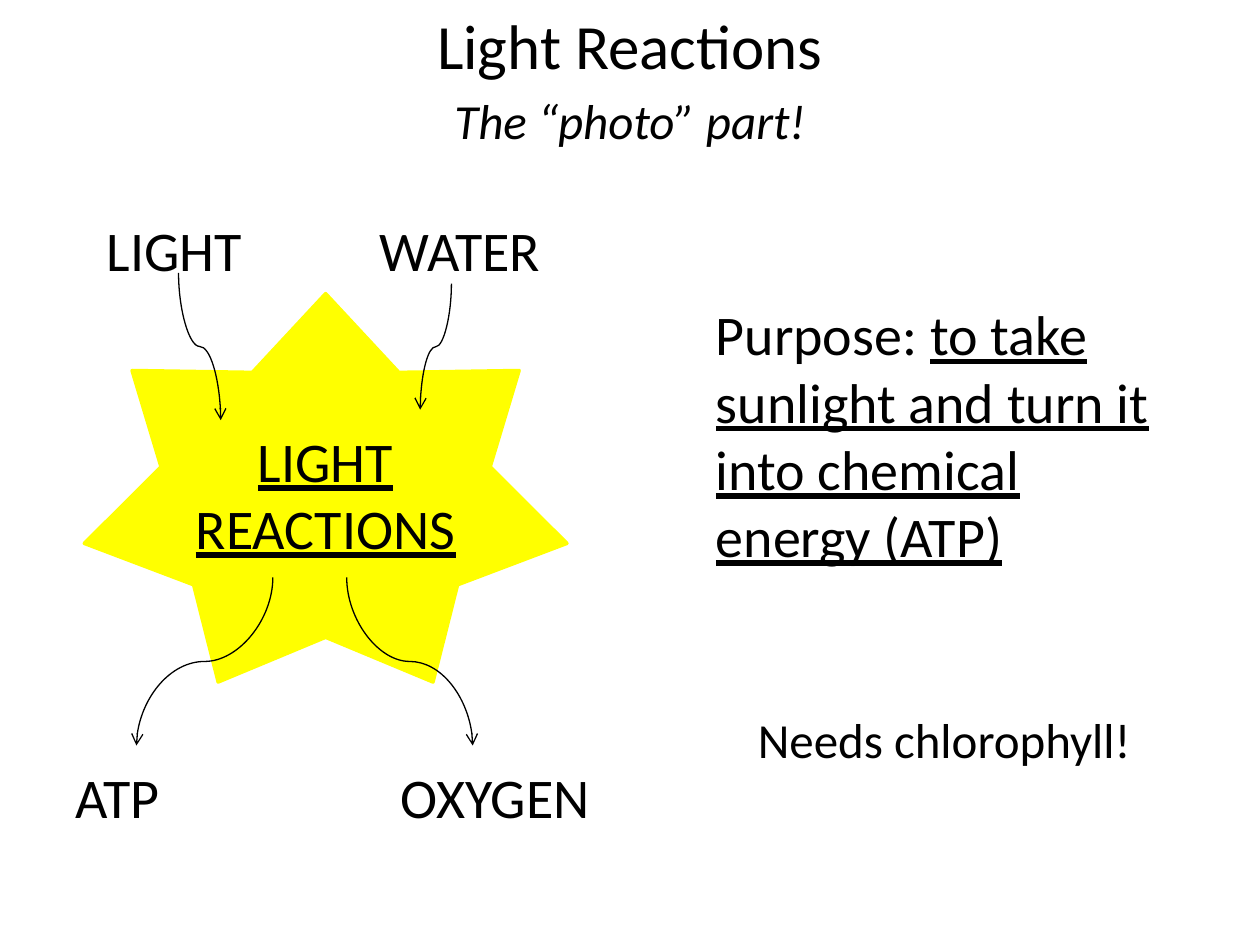
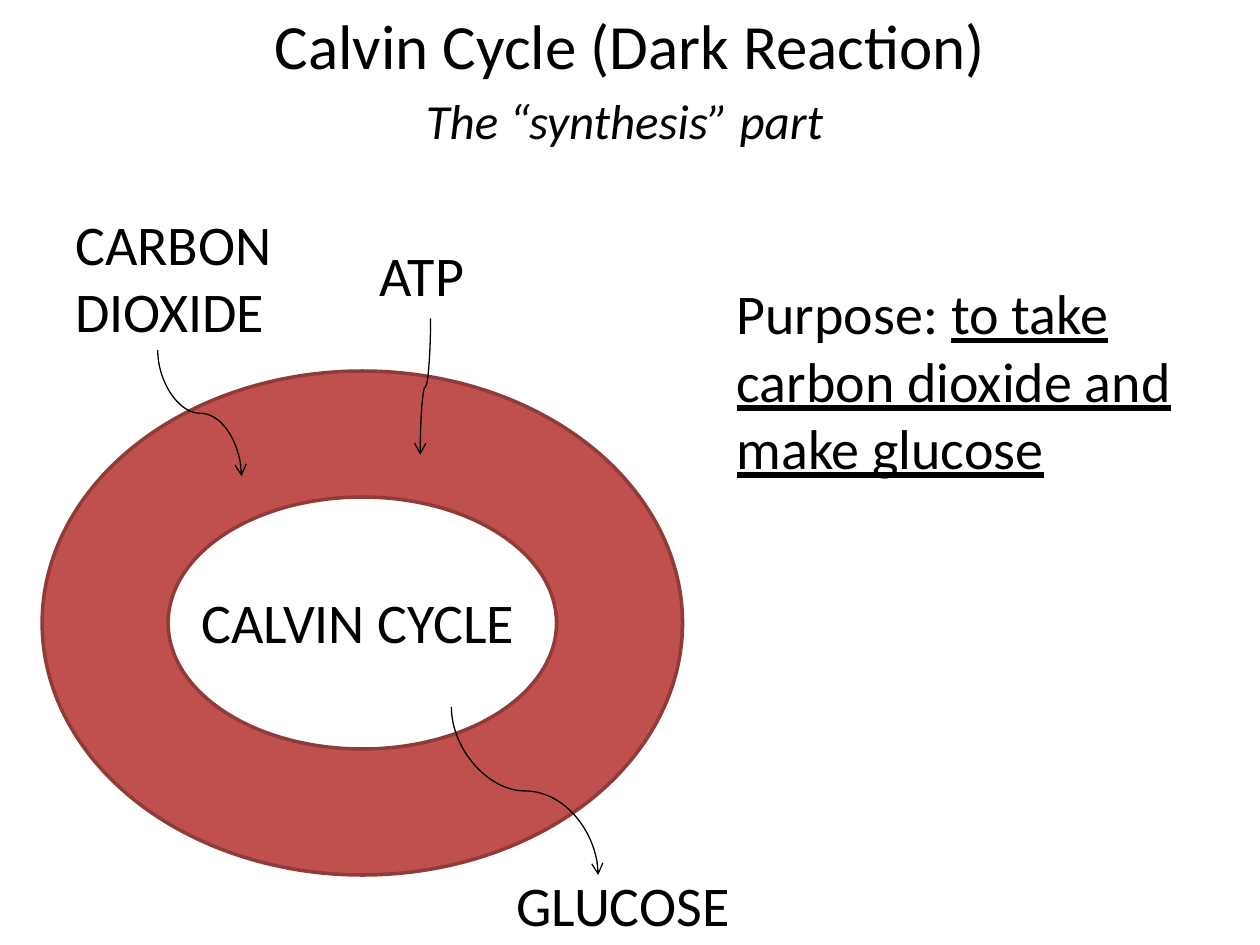
"""Build two slides on the light reactions and the Calvin cycle."""
from dataclasses import dataclass

from lxml import etree
from pptx import Presentation
from pptx.dml.color import RGBColor
from pptx.enum.shapes import MSO_CONNECTOR, MSO_SHAPE
from pptx.enum.text import MSO_ANCHOR, MSO_AUTO_SIZE, PP_ALIGN
from pptx.oxml.ns import qn
from pptx.util import Cm, Pt

LEFT, CENTER = PP_ALIGN.LEFT, PP_ALIGN.CENTER
TOP = MSO_ANCHOR.TOP
GROW = MSO_AUTO_SIZE.SHAPE_TO_FIT_TEXT
CURVE = MSO_CONNECTOR.CURVE
STAR, DONUT = MSO_SHAPE.STAR_7_POINT, MSO_SHAPE.DONUT


@dataclass(frozen=True)
class Theme:
    font: str = "Calibri"
    ink: RGBColor = RGBColor(0x00, 0x00, 0x00)
    sun: RGBColor = RGBColor(0xFF, 0xFF, 0x00)
    ring: RGBColor = RGBColor(0xC0, 0x50, 0x4D)
    ring_edge: RGBColor = RGBColor(0x8E, 0x3B, 0x39)
    title_size: int = 36
    note_size: int = 28
    body_size: int = 32
    edge_width: float = 2
    arrow_width: float = 0.75


THEME = Theme()
TITLE_BOX = (0, 0, 25.4, 1.8)
SUBTITLE_BOX = (0, 1.7, 25.4, 1.45)

SLIDES = [
    {
        "title": "Light Reactions",
        "subtitle": "The “photo” part!",
        "symbol": (STAR, (1.7, 5.92, 9.73, 7.83), THEME.sun, THEME.sun, 0.341),
        "purpose": ("to take sunlight and turn it into chemical energy (ATP)",
                    (14.18, 5.92, 9.95, 5.74)),
        "labels": [
            ("LIGHT", (1.9, 4.23, 4.23, 1.62), {}),
            ("WATER", (7.41, 4.23, 4.45, 1.62), {}),
            ("ATP", (1.27, 15.24, 4.02, 1.62), {}),
            ("OXYGEN", (7.83, 15.24, 4.66, 1.62), {}),
            ("", (3.18, 8.47, 6.77, 3),
             {"underlined": "LIGHT REACTIONS", "align": CENTER}),
            ("Needs chlorophyll!", (15.03, 14.18, 9.1, 1.45),
             {"size": THEME.note_size}),
        ],
        "arrows": [
            (3.6, 5.5, 4.45, 8.47),
            (9.1, 5.72, 8.47, 8.26),
            (5.5, 11.64, 2.75, 15.03),
            (6.99, 11.64, 9.53, 15.03),
        ],
    },
    {
        "title": "Calvin Cycle (Dark Reaction)",
        "subtitle": "The “synthesis” part ",
        "symbol": (DONUT, (0.85, 7.48, 12.91, 10.16), THEME.ring, THEME.ring_edge, 0.25),
        "purpose": ("to take carbon dioxide and make glucose",
                    (14.6, 5.5, 9.53, 4.37)),
        "labels": [
            ("CALVIN CYCLE", (3.81, 11.71, 6.99, 1.62), {}),
            ("CARBON DIOXIDE", (1.27, 4.09, 6.35, 3), {}),
            ("ATP", (7.41, 4.73, 4.23, 1.62), {}),
            ("GLUCOSE", (10.16, 17.43, 6.14, 1.62), {}),
        ],
        "arrows": [
            (3.18, 7.06, 4.87, 9.6),
            (8.68, 6.42, 8.47, 9.17),
            (9.1, 14.25, 12.06, 17.64),
        ],
    },
]


def write_text(shape, text, underlined="", size=THEME.body_size, align=LEFT, italic=False):
    frame = shape.text_frame
    frame.word_wrap = True
    frame.auto_size = GROW
    frame.vertical_anchor = TOP
    paragraph = frame.paragraphs[0]
    paragraph.alignment = align
    for content, underline in ((text, False), (underlined, True)):
        if content:
            run = paragraph.add_run()
            run.text = content
            run.font.name = THEME.font
            run.font.size = Pt(size)
            run.font.color.rgb = THEME.ink
            run.font.italic = italic
            run.font.underline = underline


def add_arrow(slide, start_x, start_y, end_x, end_y):
    middle_x, middle_y = (start_x + end_x) / 2, (start_y + end_y) / 2
    rightward = end_x > start_x
    half_length = (end_y - start_y) / 2 * (-1 if rightward else 1)
    half_span = abs(end_x - start_x) / 2
    connector = slide.shapes.add_connector(
        CURVE,
        Cm(middle_x - half_length), Cm(middle_y - half_span),
        Cm(middle_x + half_length), Cm(middle_y + half_span))
    connector.line.color.rgb = THEME.ink
    connector.line.width = Pt(THEME.arrow_width)
    properties = connector._element.spPr
    degrees = 270 if rightward else 90
    properties.find(qn("a:xfrm")).set("rot", str(degrees * 60000))
    etree.SubElement(properties.find(qn("a:ln")), qn("a:tailEnd"), type="arrow")
    etree.SubElement(properties, qn("a:effectLst"))


presentation = Presentation()
presentation.slide_width, presentation.slide_height = Cm(25.4), Cm(19.05)
title_only = presentation.slide_layouts[5]

for content in SLIDES:
    slide = presentation.slides.add_slide(title_only)
    title = slide.shapes.title
    title.left, title.top, title.width, title.height = map(Cm, TITLE_BOX)
    write_text(title, content["title"], size=THEME.title_size, align=CENTER)

    kind, box, fill, edge, adjustment = content["symbol"]
    symbol = slide.shapes.add_shape(kind, *map(Cm, box))
    symbol.shadow.inherit = False
    symbol.adjustments[0] = adjustment
    symbol.fill.solid()
    symbol.fill.fore_color.rgb = fill
    symbol.line.color.rgb = edge
    symbol.line.width = Pt(THEME.edge_width)

    purpose, purpose_box = content["purpose"]
    texts = [
        (content["subtitle"], SUBTITLE_BOX,
         {"size": THEME.note_size, "align": CENTER, "italic": True}),
        ("Purpose: ", purpose_box, {"underlined": purpose}),
        *content["labels"],
    ]
    for text, box, text_format in texts:
        write_text(slide.shapes.add_textbox(*map(Cm, box)), text, **text_format)

    for arrow in content["arrows"]:
        add_arrow(slide, *arrow)

presentation.save("out.pptx")
